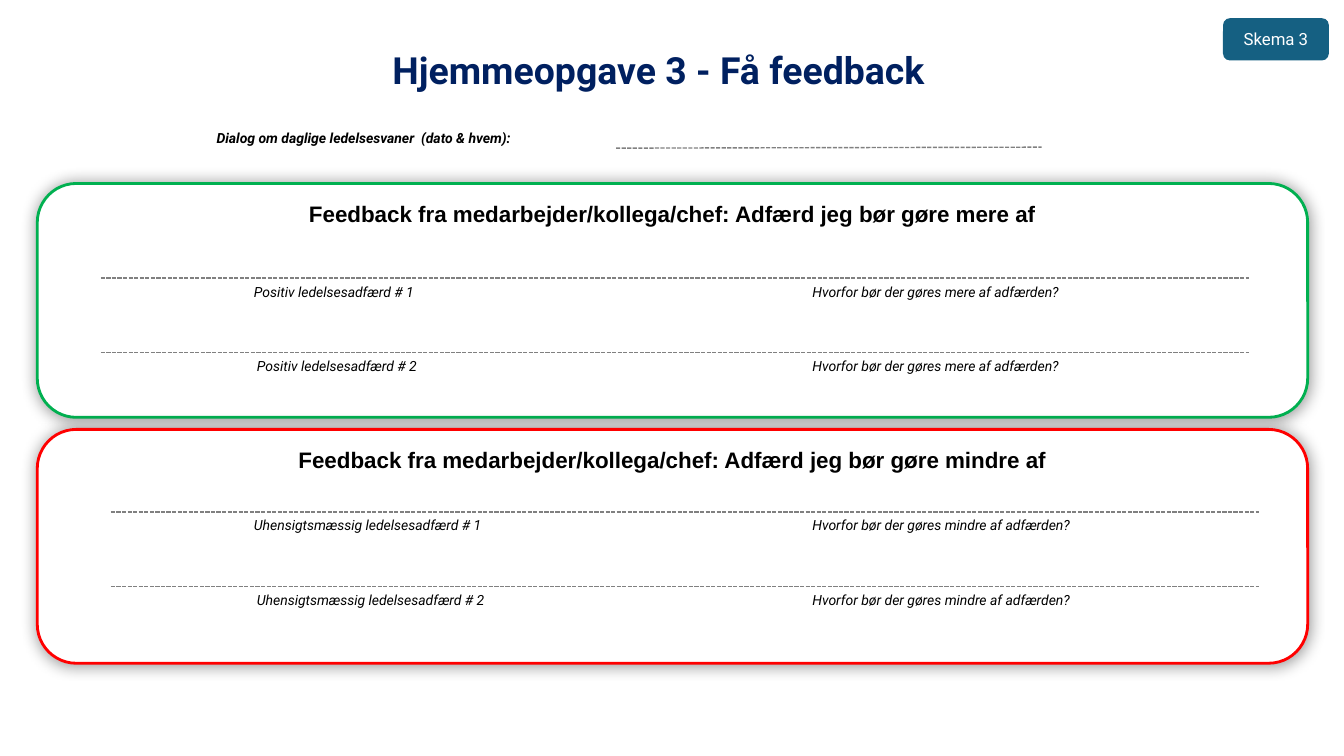
from lxml import etree
from pptx import Presentation
from pptx import util as u
from pptx.dml.color import RGBColor
from pptx.enum import dml, shapes, text
from pptx.oxml import parse_xml
from pptx.oxml.ns import nsdecls, qn

Inches, Pt = u.Inches, u.Pt
COLOURS = {
    "white": "FFFFFF", "black": "000000", "grey": "808080", "navy": "002060",
    "teal": "156082", "green": "00B050", "red": "FF0000",
}

deck = Presentation()
deck.slide_width, deck.slide_height = Inches(13.33), Inches(7.5)
page = deck.slides.add_slide(deck.slide_layouts[6])


def write(box, wording, size, colour="black", font="Roboto", bold=False, italic=False, centred=True):
    para = box.text_frame.paragraphs[0]
    para.alignment = text.PP_ALIGN.CENTER if centred else text.PP_ALIGN.LEFT
    span = para.add_run()
    span.text = wording
    span.font.size, span.font.name = Pt(size), font
    span.font.bold, span.font.italic = bold, italic
    span.font.color.rgb = RGBColor.from_string(COLOURS[colour])
    return para


def rounded_box(left, top, width, height, fill):
    box = page.shapes.add_shape(shapes.MSO_SHAPE.ROUNDED_RECTANGLE, Inches(left), Inches(top),
                                Inches(width), Inches(height))
    box.shadow.inherit = False
    box.fill.solid()
    box.fill.fore_color.rgb = RGBColor.from_string(COLOURS[fill])
    box.line.fill.background()
    box.text_frame.word_wrap = True
    return box


# Panels: outline, top, heading, behaviour, question, first line, line start
panels = [
    ("green", 1.82, "Feedback fra medarbejder/kollega/chef: Adfærd jeg bør gøre mere af",
     "Positiv ledelsesadfærd", 1.79, "Hvorfor bør der gøres mere af adfærden?", 2.65, 2.76, 1),
    ("red", 4.26, "Feedback fra medarbejder/kollega/chef: Adfærd jeg bør gøre mindre af",
     "Uhensigtsmæssig ledelsesadfærd", 2.47, "Hvorfor bør der gøres mindre af adfærden?", 2.77, 5.08, 1.1),
]
labels = [(2.05, 1.24, 3.24, "Dialog om daglige ledelsesvaner  (dato & hvem):", True)]
rules = [(6.11, 1.47, 10.33, 1.46)]

for outline, top, heading, behaviour, behaviour_width, question, question_width, first, start in panels:
    panel = rounded_box(0.37, top, 12.6, 2.32, "white")
    panel.line.color.rgb = RGBColor.from_string(COLOURS[outline])
    panel.line.width = Pt(2)
    panel.text_frame.vertical_anchor = text.MSO_ANCHOR.TOP
    effects = panel._element.spPr.find(qn("a:effectLst"))
    effects.append(parse_xml(
        f'<a:outerShdw {nsdecls("a")} blurRad="{Pt(11)}" dist="0" dir="0" algn="ctr" rotWithShape="0">'
        f'<a:srgbClr val="{COLOURS["black"]}"><a:alpha val="40000"/></a:srgbClr></a:outerShdw>'))
    write(panel, heading, 16, font="Arial", bold=True)
    for row in range(2):
        y = first + row * 0.74
        rules.append((start, y, start + 11.39, y))
        labels.append((2.42 + row * 0.03, y, behaviour_width, f"{behaviour} # {row + 1}", False))
        labels.append((7.96, y, question_width, question, False))

for x1, y1, x2, y2 in rules:
    rule = page.shapes.add_connector(shapes.MSO_CONNECTOR.STRAIGHT, Inches(x1), Inches(y1),
                                     Inches(x2), Inches(y2))
    rule.line.color.rgb = RGBColor.from_string(COLOURS["grey"])
    rule.line.width = Pt(1)
    rule.line.dash_style = dml.MSO_LINE.SQUARE_DOT
    etree.SubElement(rule._element.spPr, qn("a:effectLst"))

for left, top, width, wording, bold in labels:
    label = page.shapes.add_textbox(Inches(left), Inches(top), Inches(width), Inches(0.27))
    label.text_frame.word_wrap = False
    label.text_frame.auto_size = text.MSO_AUTO_SIZE.SHAPE_TO_FIT_TEXT
    write(label, wording, 10, bold=bold, italic=True, centred=False)

title = page.shapes.add_textbox(Inches(2.36), Inches(0.31), Inches(8.35), Inches(0.6))
frame = title.text_frame
frame.word_wrap = True
frame.vertical_anchor = text.MSO_ANCHOR.BOTTOM
frame.margin_left = frame.margin_right = frame.margin_top = frame.margin_bottom = 0
write(title, "Hjemmeopgave 3 - Få feedback", 26.7, "navy", bold=True).line_spacing = Pt(33)

badge = rounded_box(12.13, 0.18, 1.05, 0.42, "teal")
badge.text_frame.vertical_anchor = text.MSO_ANCHOR.MIDDLE
write(badge, "Skema 3", 12, "white")

deck.save("out.pptx")
